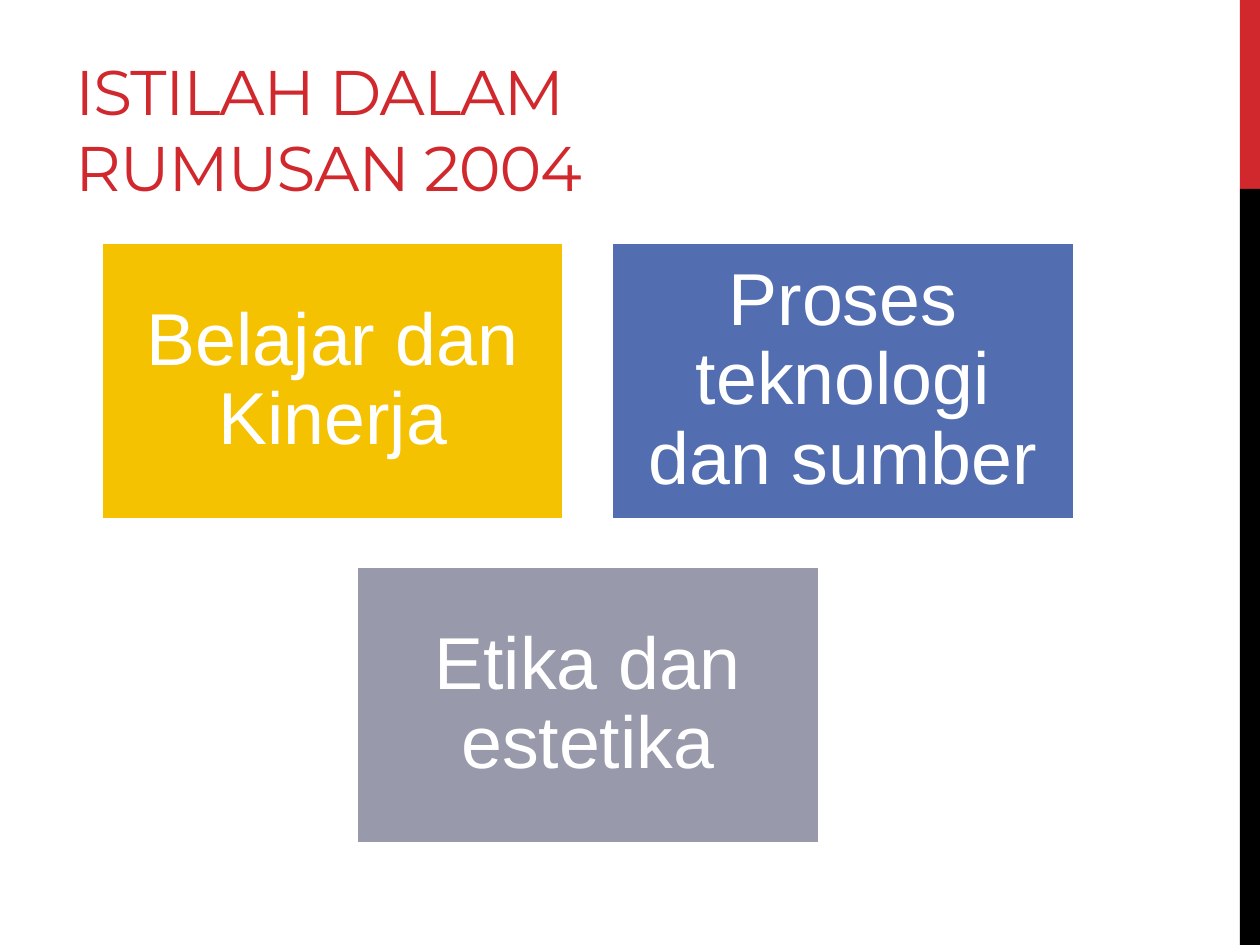
from pptx import Presentation
from pptx.dml.color import RGBColor
from pptx.enum import shapes, text
from pptx.util import Inches, Pt

COLOURS = {
    "red": "D1282E",
    "black": "000000",
    "white": "FFFFFF",
    "yellow": "F5C201",
    "blue": "526DB0",
    "grey": "989AAC",
}


def rgb(name):
    """Return the named colour."""
    return RGBColor.from_string(COLOURS[name])


def write_text(shape, content, *, font, size, colour, align, anchor,
               inset=None, line_spacing=None, tracking=None):
    """Write one formatted paragraph into a shape."""
    frame = shape.text_frame
    frame.word_wrap = True
    frame.vertical_anchor = anchor
    if inset is not None:
        frame.margin_left = frame.margin_right = Inches(inset)
        frame.margin_top = frame.margin_bottom = Inches(inset)
    paragraph = frame.paragraphs[0]
    paragraph.alignment = align
    if line_spacing is not None:
        paragraph.line_spacing = line_spacing
    run = paragraph.add_run()
    run.text = content
    run.font.name = font
    run.font.size = Pt(size)
    run.font.color.rgb = rgb(colour)
    if tracking is not None:
        run._r.get_or_add_rPr().set("spc", str(round(tracking * 100)))


def add_rectangle(slide, box, fill, outline=None):
    """Add a flat rectangle with an optional outline colour."""
    shape = slide.shapes.add_shape(
        shapes.MSO_SHAPE.RECTANGLE, *map(Inches, box))
    shape.shadow.inherit = False
    shape.fill.solid()
    shape.fill.fore_color.rgb = rgb(fill)
    if outline:
        shape.line.color.rgb = rgb(outline)
        shape.line.width = Pt(2.25)
    else:
        shape.line.fill.background()
    return shape


def add_side_band(slide, left, top, width, height):
    """Place the red and black band, red taking the top fifth."""
    red_height = height / 5
    add_rectangle(slide, (left, top, width, red_height), "red")
    add_rectangle(
        slide, (left, top + red_height, width, height - red_height), "black")


def add_title(slide, left, top, width, height):
    """Place the slide title."""
    title = slide.shapes.add_textbox(
        *map(Inches, (left, top, width, height)))
    write_text(title, "ISTILAH DALAM RUMUSAN 2004", font="Montserrat",
               size=36, colour="red", align=text.PP_ALIGN.LEFT,
               anchor=text.MSO_ANCHOR.BOTTOM, tracking=-0.6)


def add_term_blocks(slide, left, top, width, height):
    """Place the rows of term blocks, each row centred in the box."""
    rows = [
        [("Belajar dan Kinerja", "yellow"),
         ("Proses teknologi dan sumber", "blue")],
        [("Etika dan estetika", "grey")],
    ]
    gap = 0.37
    block_width = (width - gap) / 2
    block_height = (height - gap) / len(rows)
    for row_index, row in enumerate(rows):
        row_width = len(row) * (block_width + gap) - gap
        row_left = left + (width - row_width) / 2
        row_top = top + row_index * (block_height + gap)
        for column, (term, fill) in enumerate(row):
            block_left = row_left + column * (block_width + gap)
            block = add_rectangle(
                slide, (block_left, row_top, block_width, block_height),
                fill, outline="white")
            write_text(block, term, font="Arial", size=42, colour="white",
                       align=text.PP_ALIGN.CENTER,
                       anchor=text.MSO_ANCHOR.MIDDLE,
                       inset=0.17, line_spacing=0.9)


def main():
    """Build and save the presentation."""
    presentation = Presentation()
    presentation.slide_width = Inches(10)
    presentation.slide_height = Inches(7.5)
    slide = presentation.slides.add_slide(presentation.slide_layouts[6])
    add_side_band(slide, 9.84, 0, 0.16, 7.5)
    add_title(slide, 0.5, 0.17, 6.33, 1.5)
    add_term_blocks(slide, 0.8, 1.92, 7.73, 4.78)
    presentation.save("out.pptx")


if __name__ == "__main__":
    main()
